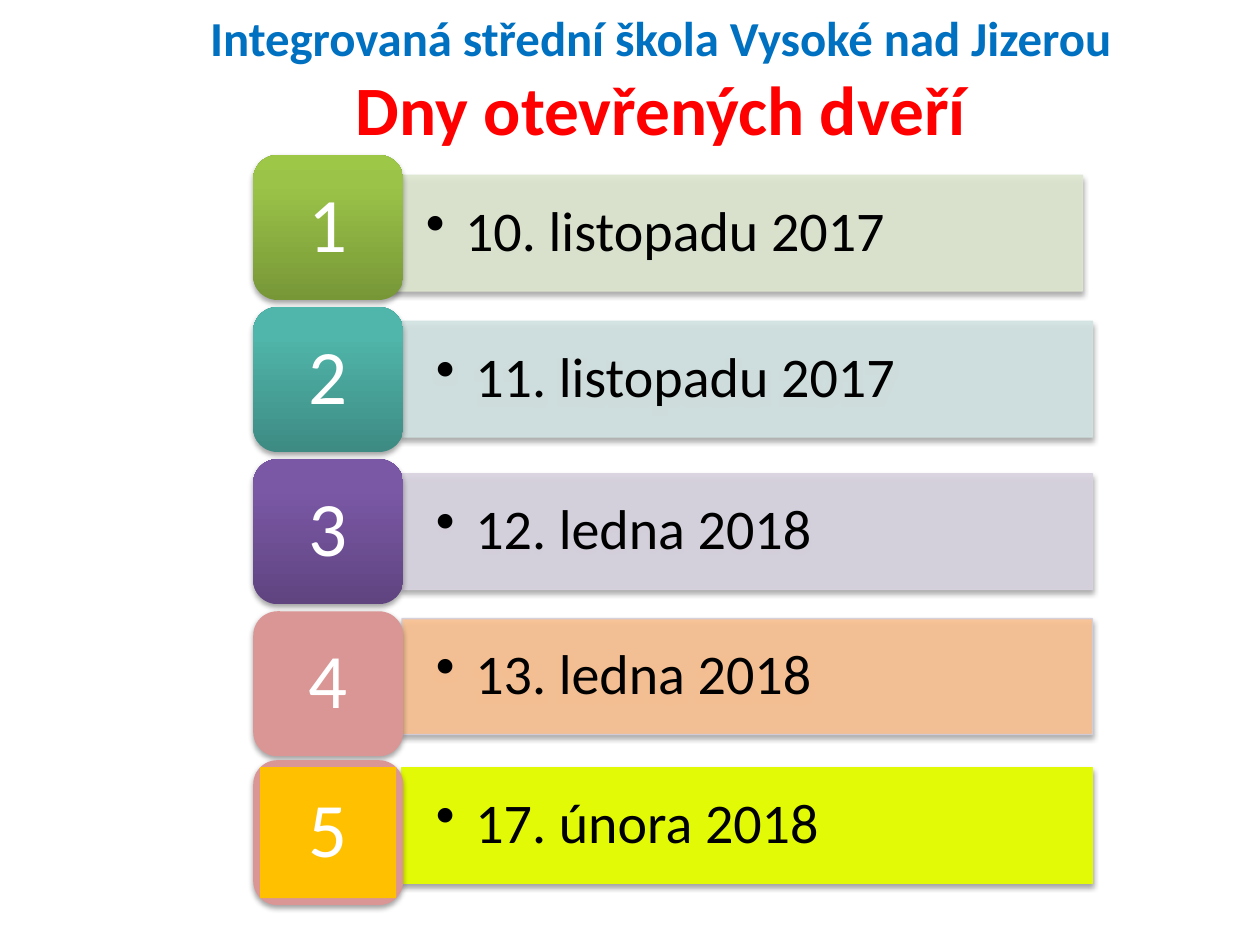
"""Build the open-days slide: a two-line title above five numbered date rows."""
from copy import deepcopy

from lxml import etree
from pptx import Presentation, util as u
from pptx.dml.color import RGBColor
from pptx.enum import shapes, text
from pptx.oxml import ns

FONT = "Calibri"
BLACK = RGBColor(0, 0, 0)
WHITE = RGBColor(255, 255, 255)
BLUE = RGBColor(0x00, 0x70, 0xC0)
RED = RGBColor(0xFF, 0, 0)
ROSE = RGBColor(0xD9, 0x96, 0x94)
AMBER = RGBColor(0xFF, 0xC0, 0x00)
LIME = RGBColor(0xE3, 0xFA, 0x06)
PEACH = RGBColor(0xFA, 0xC0, 0x90)
LILAC = RGBColor(0xD3, 0xCE, 0xDB)
SAGE = RGBColor(0xDE, 0xE7, 0xD1)
MIST = RGBColor(0xD2, 0xE3, 0xE2)
LAVENDER = RGBColor(0xD8, 0xD3, 0xE0)
GREENS = [RGBColor.from_string(c) for c in ("779737", "9BC348", "9DC746")]
TEALS = [RGBColor.from_string(c) for c in ("3D8B83", "50B5AA", "4EB8AC")]
PURPLES = [RGBColor.from_string(c) for c in ("5F4480", "7B58A6", "7C57A8")]

HEADING = [("Integrovaná střední škola Vysoké nad Jizerou", 27.9, BLUE),
           ("Dny otevřených dveří", 39.6, RED)]
ROWS = [
    dict(date="10. listopadu 2017", tile=GREENS, bar=SAGE, edge=SAGE, left=223.9, top=100.1),
    dict(date="11. listopadu 2017", tile=TEALS, bar=MIST, edge=MIST, top=183.6),
    dict(date="12. ledna 2018", tile=PURPLES, bar=LAVENDER, edge=LAVENDER, top=270.7),
    dict(date="13. ledna 2018", tile=[ROSE], bar=PEACH, edge=LILAC, top=353.5),
    dict(date="17. února 2018", tile=[ROSE], bar=LIME, edge=LIME, top=438.5, opacity=100,
         core=AMBER),
]
TILE_TOPS = [88.6, 175.5, 262.4, 349.3, 434.4]
TILE_LEFT, TILE_W, TILE_H = 144.7, 85.7, 82.8
BAR_LEFT, BAR_W, BAR_H = 229.7, 394.6, 66.2
CORE_INSET = 4
STOPS = (0, 0.8, 1)


def child(parent, tag, **attributes):
    return etree.SubElement(parent, ns.qn(tag), attributes)


def add_block(slide, kind, left, top, width, height, colors, opacity=100, edge=None, shadow=True):
    block = slide.shapes.add_shape(kind, *map(u.Pt, (left, top, width, height)))
    properties = block._element.spPr
    if len(colors) > 1:
        block.fill.gradient()
        block.fill.gradient_angle = 90
        stop_list = properties.find(".//" + ns.qn("a:gsLst"))
        stop_list.append(deepcopy(stop_list[-1]))
        for stop, position, color in zip(block.fill.gradient_stops, STOPS, colors):
            stop.position = position
            stop.color.rgb = color
    else:
        block.fill.solid()
        block.fill.fore_color.rgb = colors[0]
    if edge is None:
        block.line.fill.background()
    else:
        block.line.color.rgb = edge
        block.line.width = u.Pt(0.75)
    if opacity < 100:
        for color in list(properties.iter(ns.qn("a:srgbClr"))):
            child(color, "a:alpha", val=str(opacity * 1000))
    block.shadow.inherit = False
    if shadow:
        cast = child(properties.find(ns.qn("a:effectLst")), "a:outerShdw",
                     blurRad=str(u.Pt(3.1)), dist=str(u.Pt(1.8)), dir="5400000", rotWithShape="0")
        child(child(cast, "a:srgbClr", val="000000"), "a:alpha", val="35000")
    return block


def write(block, words, size, color, align, margin_x, margin_y, bullet=False):
    frame = block.text_frame
    frame.word_wrap = True
    frame.vertical_anchor = text.MSO_ANCHOR.MIDDLE
    frame.margin_left = frame.margin_right = u.Pt(margin_x)
    frame.margin_top = frame.margin_bottom = u.Pt(margin_y)
    paragraph = frame.paragraphs[0]
    paragraph.alignment = align
    paragraph.line_spacing = 0.9
    if bullet:
        paragraph.level = 1
        layout = paragraph._p.get_or_add_pPr()
        layout.set("marL", str(u.Pt(22.5)))
        layout.set("indent", str(u.Pt(-22.5)))
        child(layout, "a:buChar", char="•")
    add_run(paragraph, words, size, color)


def add_run(paragraph, words, size, color, bold=False):
    run = paragraph.add_run()
    run.text = words
    run.font.name = FONT
    run.font.size = u.Pt(size)
    run.font.bold = bold
    run.font.color.rgb = color


def add_heading(slide):
    title = slide.shapes.title
    title.left, title.top, title.width, title.height = map(u.Pt, (59.8, 0, 635.8, 90))
    frame = title.text_frame
    frame.auto_size = text.MSO_AUTO_SIZE.NONE
    frame.vertical_anchor = text.MSO_ANCHOR.MIDDLE
    paragraph = frame.paragraphs[0]
    paragraph.alignment = text.PP_ALIGN.CENTER
    for index, (words, size, color) in enumerate(HEADING):
        if index:
            line_break = paragraph._p.add_br()
            child(line_break, "a:rPr", sz=str(round(HEADING[0][1] * 100)))
        add_run(paragraph, words, size, color, bold=True)


def add_row(slide, number, row, tile_top):
    kinds = shapes.MSO_SHAPE
    bar = add_block(slide, kinds.RECTANGLE, row.get("left", BAR_LEFT), row["top"], BAR_W, BAR_H,
                    [row["bar"]], row.get("opacity", 90), row["edge"])
    write(bar, row["date"], 32, BLACK, text.PP_ALIGN.LEFT, 19.4, 10, bullet=True)
    tile = add_block(slide, kinds.ROUNDED_RECTANGLE, TILE_LEFT, tile_top, TILE_W, TILE_H,
                     row["tile"])
    if "core" in row:
        tile = add_block(slide, kinds.RECTANGLE, TILE_LEFT + CORE_INSET, tile_top + CORE_INSET,
                         TILE_W - 2 * CORE_INSET, TILE_H - 2 * CORE_INSET,
                         [row["core"]], shadow=False)
    write(tile, str(number), 44, WHITE, text.PP_ALIGN.CENTER, 13, 6.5)


def main():
    deck = Presentation()
    deck.slide_width, deck.slide_height = u.Pt(720), u.Pt(540)
    slide = deck.slides.add_slide(deck.slide_layouts[5])
    for number, (row, tile_top) in enumerate(zip(ROWS, TILE_TOPS), 1):
        add_row(slide, number, row, tile_top)
    add_heading(slide)
    deck.save("out.pptx")


if __name__ == "__main__":
    main()
